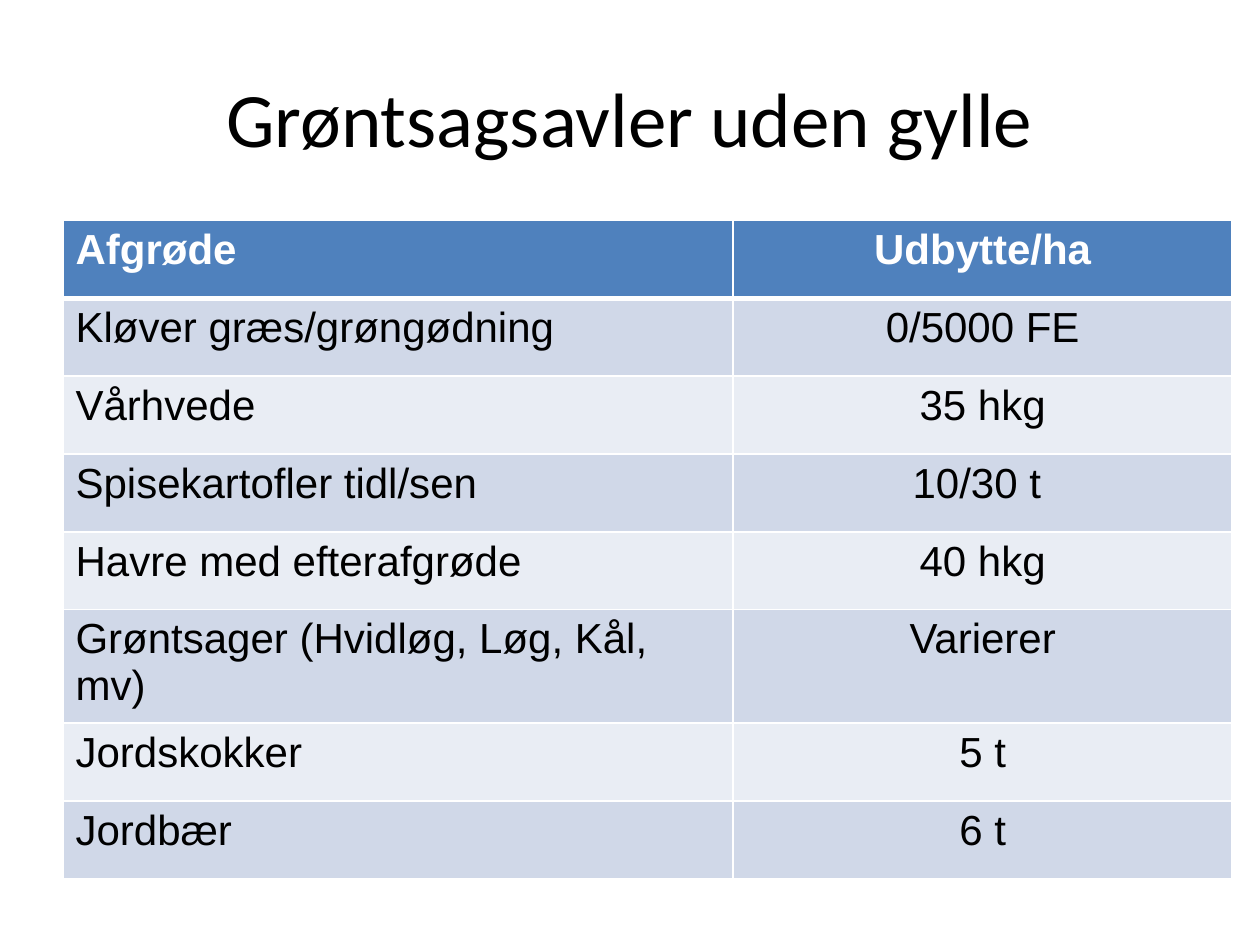
from typing import NamedTuple

from lxml.etree import SubElement
from pptx import Presentation
from pptx.dml.color import RGBColor
from pptx.enum.text import MSO_ANCHOR as Anchor, PP_ALIGN as Align
from pptx.oxml.ns import qn
from pptx.util import Pt

BLACK = RGBColor(0x00, 0x00, 0x00)
WHITE = RGBColor(0xFF, 0xFF, 0xFF)
HEADER_BLUE = RGBColor(0x4F, 0x81, 0xBD)
BAND_DARK = RGBColor(0xD0, 0xD8, 0xE8)
BAND_LIGHT = RGBColor(0xE9, 0xED, 0xF4)

TITLE_FORMAT = {"name": "Calibri", "size": Pt(44), "bold": False}
HEADER_FORMAT = {"name": "Arial", "size": Pt(24), "bold": True}
BODY_FORMAT = {"name": "Arial", "size": Pt(24), "bold": False}

COLUMN_WIDTHS = (383, 285.1)
COLUMN_ALIGNS = (Align.LEFT, Align.CENTER)
ROW_HEIGHT = 44.5


class Crop(NamedTuple):
    name: str
    crop_yield: str


HEADER = Crop("Afgrøde", "Udbytte/ha")
CROPS = (
    Crop("Kløver græs/grøngødning", "0/5000 FE"),
    Crop("Vårhvede", "35 hkg"),
    Crop("Spisekartofler tidl/sen", "10/30 t "),
    Crop("Havre med efterafgrøde", "40 hkg"),
    Crop("Grøntsager (Hvidløg, Løg, Kål, mv)", "Varierer"),
    Crop("Jordskokker", "5 t"),
    Crop("Jordbær", "6 t"),
)


def write_text(frame, text: str, align: Align, color: RGBColor, formats: dict) -> None:
    para = frame.paragraphs[0]
    para.alignment = align
    span = para.add_run()
    span.text = text
    span.font.color.rgb = color
    for attribute, value in formats.items():
        setattr(span.font, attribute, value)


def add_borders(cell, top: float, bottom: float) -> None:
    properties = cell._tc.get_or_add_tcPr()
    for side, width in (("L", 1), ("R", 1), ("T", top), ("B", bottom)):
        line = SubElement(properties, qn(f"a:ln{side}"), w=str(Pt(width)))
        fill = SubElement(line, qn("a:solidFill"))
        SubElement(fill, qn("a:srgbClr"), val=str(WHITE))


def add_title(page, text: str) -> None:
    box = page.shapes.add_textbox(Pt(36), Pt(21.6), Pt(648), Pt(90))
    frame = box.text_frame
    frame.word_wrap = True
    frame.vertical_anchor = Anchor.MIDDLE
    write_text(frame, text, Align.CENTER, BLACK, TITLE_FORMAT)


def add_crop_table(page, rows: tuple[Crop, ...]) -> None:
    table = page.shapes.add_table(
        len(rows), len(COLUMN_WIDTHS), Pt(36), Pt(126),
        Pt(sum(COLUMN_WIDTHS)), Pt(ROW_HEIGHT * len(rows)),
    ).table
    for column, width in zip(table.columns, COLUMN_WIDTHS):
        column.width = Pt(width)
    for row_index, crop in enumerate(rows):
        table.rows[row_index].height = Pt(ROW_HEIGHT)
        is_header = row_index == 0
        band = BAND_DARK if row_index % 2 else BAND_LIGHT
        for column_index, text in enumerate(crop):
            cell = table.cell(row_index, column_index)
            add_borders(cell, 3 if row_index == 1 else 1, 3 if is_header else 1)
            cell.fill.solid()
            cell.fill.fore_color.rgb = HEADER_BLUE if is_header else band
            write_text(
                cell.text_frame, text, COLUMN_ALIGNS[column_index],
                WHITE if is_header else BLACK,
                HEADER_FORMAT if is_header else BODY_FORMAT,
            )


def main() -> None:
    deck = Presentation()
    deck.slide_width, deck.slide_height = Pt(720), Pt(540)
    page = deck.slides.add_slide(deck.slide_layouts[6])
    add_title(page, "Grøntsagsavler uden gylle")
    add_crop_table(page, (HEADER, *CROPS))
    deck.save("out.pptx")


if __name__ == "__main__":
    main()
